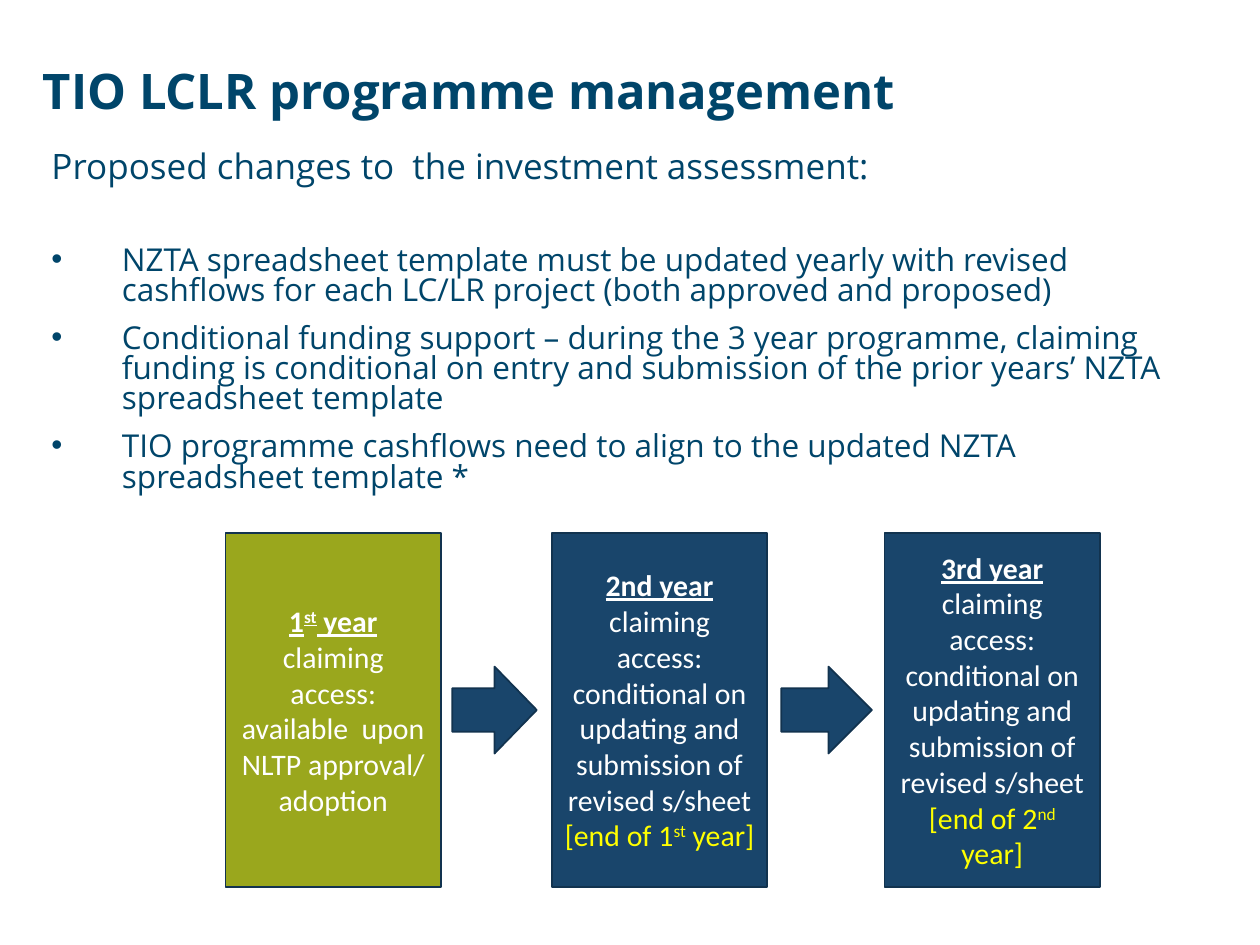
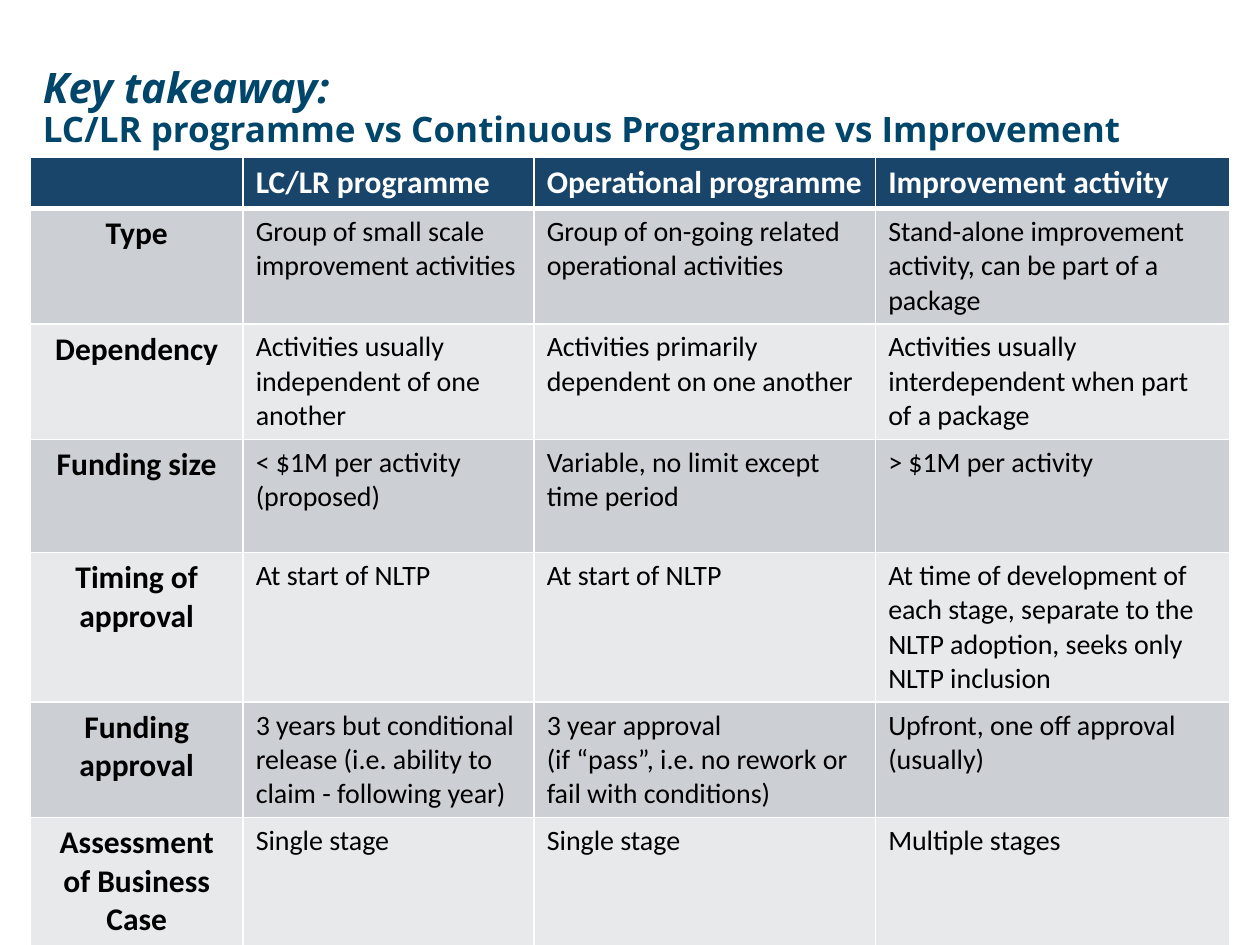
from lxml import etree
from pptx import Presentation
from pptx import util as u
from pptx.dml.color import RGBColor
from pptx.enum import shapes, text
from pptx.oxml.ns import qn

PX = 9144  # 100 px to the inch
NAVY, BLUE, EDGE, LIME = "00456A", "19456B", "12334F", "9AA71D"
WHITE, BLACK, YELLOW = "FFFFFF", "000000", "FFFF00"
BANDS = ["CCCFD4", "E8E9EB"]
HEAD, BODY = "Open Sans", "Calibri"
LEFT, MID = text.PP_ALIGN.LEFT, text.PP_ALIGN.CENTER
TOP, CENTRE = text.MSO_ANCHOR.TOP, text.MSO_ANCHOR.MIDDLE

STEPS = "claiming access: conditional on updating and submission of revised s/sheet"
POINTS = [
    "NZTA spreadsheet template must be updated yearly with revised cashflows "
    "for each LC/LR project (both approved and proposed)",
    "Conditional funding support – during the 3 year programme, claiming funding is "
    "conditional on entry and submission of the prior years’ NZTA spreadsheet template",
    "TIO programme cashflows need to align to the updated NZTA spreadsheet template *",
]
ROWS = [
    ["", "LC/LR programme", "Operational programme", "Improvement activity"],
    ["Type", "Group of small scale improvement activities",
     "Group of on-going related operational activities",
     "Stand-alone improvement activity, can be part of a package"],
    ["Dependency", "Activities usually independent of one another",
     "Activities primarily dependent on one another",
     "Activities usually interdependent when part of a package"],
    ["Funding size", "< $1M per activity (proposed)",
     "Variable, no limit except time period", "> $1M per activity"],
    ["Timing of approval", "At start of NLTP", "At start of NLTP",
     "At time of development of each stage, separate to the NLTP adoption, "
     "seeks only NLTP inclusion"],
    ["Funding approval",
     "3 years but conditional release (i.e. ability to claim - following year)",
     "3 year approval\n(if “pass”, i.e. no rework or fail with conditions)",
     "Upfront, one off approval (usually)"],
    ["Assessment of Business Case", "Single stage", "Single stage", "Multiple stages"],
]


def px(*vals):
    return [v * PX for v in vals]


def rgb(code):
    return RGBColor.from_string(code)


def write(par, words, size=18, font=BODY, color=BLACK, bold=False,
          ital=False, line=False, sup=False):
    """Add one run of text to a paragraph."""
    run = par.add_run()
    run.text = words
    f = run.font
    f.size, f.name, f.bold, f.italic, f.underline = u.Pt(size), font, bold, ital, line
    f.color.rgb = rgb(color)
    if sup:
        run._r.get_or_add_rPr().set("baseline", "30000")


def para(frame, first=False, align=LEFT, space=None, before=0):
    par = frame.paragraphs[0] if first else frame.add_paragraph()
    par.alignment = align
    par.space_before = u.Pt(before)
    if space:
        par.line_spacing = space
    return par


def bullet(par, indent):
    props = par._p.get_or_add_pPr()
    props.set("marL", str(indent * PX))
    props.set("indent", str(-indent * PX))
    etree.SubElement(props, qn("a:buFont")).set("typeface", "Arial")
    etree.SubElement(props, qn("a:buChar")).set("char", "•")


def title(slide, *lines):
    """Place the title; each line is its words and format."""
    box = slide.shapes.title
    box.left, box.top, box.width, box.height = px(24, 48, 960, 102)
    frame = box.text_frame
    frame.word_wrap, frame.vertical_anchor = True, TOP
    frame.auto_size = text.MSO_AUTO_SIZE.NONE
    for i, (words, form) in enumerate(lines):
        par = para(frame, i == 0, space=0.9)
        write(par, words, font=HEAD, color=NAVY, bold=True, **form)


def solid(slide, kind, spot, fill):
    shape = slide.shapes.add_shape(kind, *px(*spot))
    shape.shadow.inherit = False
    shape.fill.solid()
    shape.fill.fore_color.rgb = rgb(fill)
    shape.line.color.rgb = rgb(EDGE)
    shape.line.width = u.Pt(1)
    return shape


def year(slide, left, fill, paras):
    """Draw one year's box; each paragraph is a list of runs."""
    box = solid(slide, shapes.MSO_SHAPE.RECTANGLE, (left, 423, 171, 281), fill)
    frame = box.text_frame
    frame.word_wrap, frame.vertical_anchor = True, CENTRE
    for i, runs in enumerate(paras):
        par = para(frame, i == 0, MID)
        for words, form in runs:
            write(par, words, size=17, **form)


def points(slide, lead, items):
    frame = slide.shapes.add_textbox(*px(31, 116, 911, 445)).text_frame
    frame.word_wrap = True
    write(para(frame, True, space=0.8), lead, size=20, font=HEAD, color=NAVY)
    for i, item in enumerate(items):
        par = para(frame, space=0.8, before=10 if i else 35)
        bullet(par, 56)
        write(par, item, font=HEAD, color=NAVY)


def border(cell, base):
    props = cell._tc.get_or_add_tcPr()
    for side, width in zip("LRTB", (1, 1, 1, base)):
        line = etree.SubElement(props, qn("a:ln" + side), w=str(u.Pt(width)))
        fill = etree.SubElement(line, qn("a:solidFill"))
        etree.SubElement(fill, qn("a:srgbClr"), val=WHITE)


def grid(slide, rows, cols, highs):
    spot = px(24, 125, sum(cols), sum(highs))
    table = slide.shapes.add_table(len(rows), len(cols), *spot).table
    for col, wide in zip(table.columns, cols):
        col.width = wide * PX
    for r, row in enumerate(rows):
        table.rows[r].height = highs[r] * PX
        for c, words in enumerate(row):
            cell = table.cell(r, c)
            border(cell, 1 if r else 3)
            cell.fill.solid()
            cell.fill.fore_color.rgb = rgb(BANDS[(r - 1) % 2] if r else BLUE)
            key = r == 0 or c == 0
            for i, part in enumerate(words.split("\n") if words else []):
                par = para(cell.text_frame, i == 0, MID if r and c == 0 else LEFT)
                write(par, part, size=18 if key else 16, bold=key,
                      color=BLACK if r else WHITE)


def manage(slide):
    title(slide, ("TIO LCLR programme management", {"size": 28}))
    points(slide, "Proposed changes to  the investment assessment:", POINTS)
    # Yearly claiming steps
    top = {"color": WHITE, "bold": True, "line": True}
    plain, note = {"color": WHITE}, {"color": YELLOW}
    year(slide, 179, LIME, [
        [("1", top), ("st", {**top, "sup": True}), (" year", top)],
        [("claiming access: available  upon NLTP approval/ adoption", plain)]])
    for left, name, num, tail in ((438, "2nd", "1", "st"), (702, "3rd", "2", "nd")):
        year(slide, left, BLUE, [
            [(name + " year", top)],
            [(STEPS, plain)],
            [("[end of " + num, note), (tail, {**note, "sup": True}), (" year]", note)]])
    for left, wide in ((359, 67), (620, 72)):
        solid(slide, shapes.MSO_SHAPE.RIGHT_ARROW, (left, 529, wide, 69), BLUE)


def compare(slide):
    title(slide, ("Key takeaway:", {"size": 24, "ital": True}),
          ("LC/LR programme vs Continuous Programme vs Improvement", {"size": 20}))
    grid(slide, ROWS, [169, 231, 271, 281], [39, 90, 90, 90, 67, 67, 82])


def main():
    deck = Presentation()
    deck.slide_width, deck.slide_height = px(1000, 750)
    for build in (manage, compare):
        build(deck.slides.add_slide(deck.slide_layouts[5]))
    deck.save("out.pptx")


if __name__ == "__main__":
    main()
